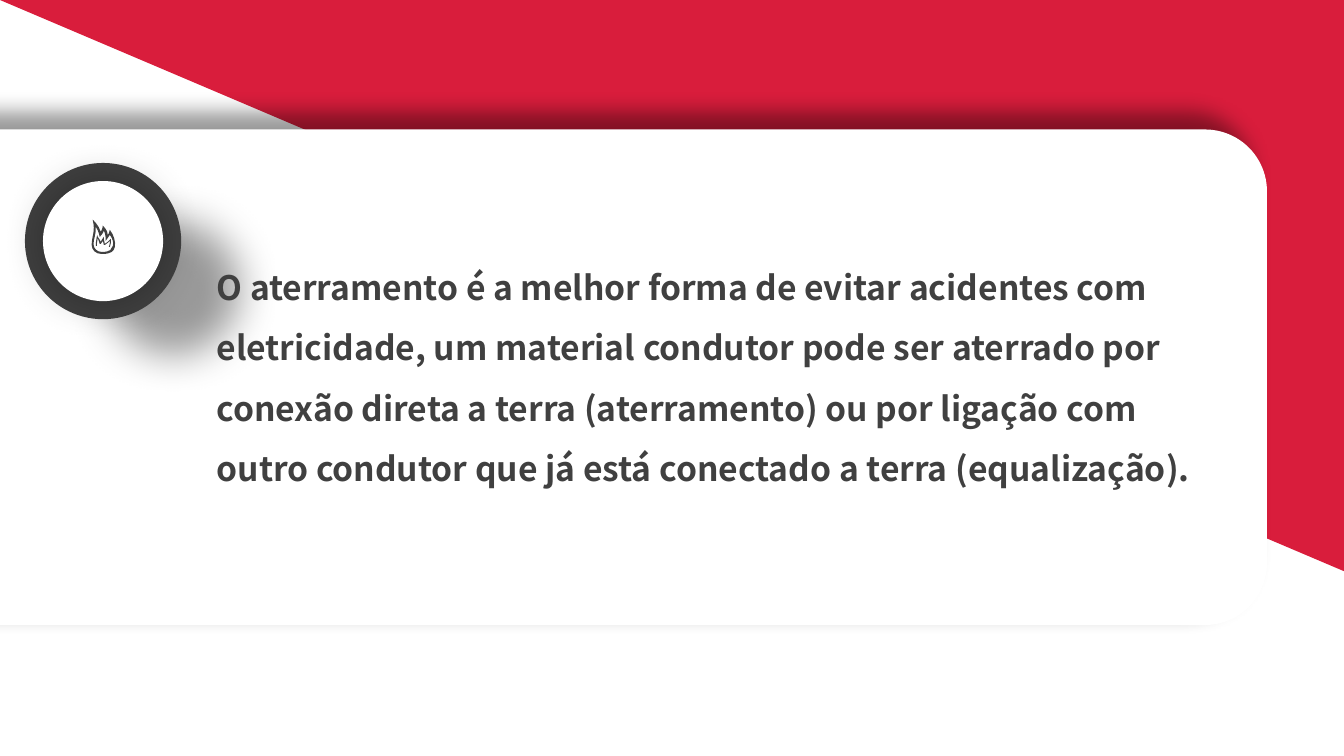
from lxml import etree
from pptx import Presentation
from pptx.dml.color import RGBColor
from pptx.enum.shapes import MSO_SHAPE as SHAPE
from pptx.enum.text import MSO_AUTO_SIZE as AUTO_SIZE
from pptx.oxml.ns import qn
from pptx.util import Pt

COLORS = {"white": "FFFFFF", "red": "D91D3C", "dark": "404040", "shadow": "000000"}
FONT = "Noto Sans CJK SC"
WIDTH, HEIGHT = 960, 540
GRID = Pt(0.72)  # grid step of the flame contours

MESSAGE = (
    "O aterramento é a melhor forma de evitar acidentes com eletricidade, "
    "um material condutor pode ser aterrado por conexão direta a terra "
    "(aterramento) ou por ligação com outro condutor que já está conectado "
    "a terra (equalização)."
)

# Each contour is a start point, then lines (x, y) or cubic curves (six numbers).
FLAME_RIM = [
    [(112, 244), (111, 247, 110, 250, 101, 250), (96, 250, 93, 246, 93, 243),
     (93, 240, 93, 238, 94, 235), (95, 232, 95, 229, 95, 225),
     (98, 229, 99, 235, 99, 235), (99, 235, 103, 231, 103, 229),
     (104, 230, 105, 234, 105, 239), (105, 239, 107, 236, 109, 233),
     (112, 237, 113, 241, 112, 244)],
    [(109, 228), (109, 231, 107, 233, 107, 233), (107, 228, 102, 224, 102, 224),
     (102, 224, 102, 227, 100, 230), (98, 223, 92, 218, 92, 218),
     (95, 230, 91, 234, 91, 243), (91, 248, 95, 252, 101, 252),
     (111, 252, 113, 249, 114, 245), (115, 240, 113, 233, 109, 228)],
]
FLAME_CORE = [
    [(110, 237), (109, 238), (108, 239, 107, 240, 104, 242),
     (103, 240, 103, 239, 103, 237), (103, 235), (101, 238),
     (101, 239, 100, 239, 100, 240), (99, 238, 98, 236, 97, 235),
     (97, 233), (96, 235), (96, 237, 95, 239, 95, 244), (96, 244),
     (96, 240, 97, 238, 97, 236), (98, 238, 98, 239, 99, 242), (100, 242),
     (101, 240, 101, 240, 102, 239), (102, 240, 103, 241, 103, 243), (104, 243),
     (107, 241, 108, 240, 109, 239), (109, 241, 109, 243, 108, 245), (109, 245),
     (110, 243, 110, 240, 110, 238), (110, 237)],
]


def paint(shape, color):
    shape.fill.solid()
    shape.fill.fore_color.rgb = RGBColor.from_string(COLORS[color])
    shape.line.fill.background()
    shape.shadow.inherit = False


def add_solid(shapes, kind, left, top, width, height, color):
    solid = shapes.add_shape(kind, Pt(left), Pt(top), Pt(width), Pt(height))
    paint(solid, color)
    return solid


def add_circle(shapes, center_x, center_y, diameter, color):
    radius = diameter / 2
    return add_solid(shapes, SHAPE.OVAL, center_x - radius, center_y - radius,
                     diameter, diameter, color)


def cast_shadow(shape, blur, distance, degrees, percent):
    """Add an outer shadow whose size is a percentage of the shape."""
    effects = shape._element.spPr.find(qn("a:effectLst"))
    size = str(int(percent * 1000))
    shadow = etree.SubElement(effects, qn("a:outerShdw"), blurRad=str(Pt(blur)),
                              dist=str(Pt(distance)), dir=str(degrees * 60000),
                              sx=size, sy=size, algn="ctr", rotWithShape="0")
    tint = etree.SubElement(shadow, qn("a:srgbClr"), val=COLORS["shadow"])
    etree.SubElement(tint, qn("a:alpha"), val="40000")


def bend(line, controls):
    """Turn a straight path segment into a cubic curve."""
    line.tag = qn("a:cubicBezTo")
    for index, (x, y) in enumerate(controls):
        line.insert(index, line.makeelement(qn("a:pt"), {"x": str(x), "y": str(y)}))


def add_outline(shapes, contours, color):
    ends = [[segment[-2:] for segment in contour] for contour in contours]
    builder = shapes.build_freeform(*ends[0][0], scale=GRID)
    for index, points in enumerate(ends):
        if index:
            builder.move_to(*points[0])
        builder.add_line_segments(points[1:], close=True)
    outline = builder.convert_to_shape()
    left = min(x for points in ends for x, y in points)
    top = min(y for points in ends for x, y in points)
    segments = [segment for contour in contours for segment in contour[1:]]
    lines = list(outline._element.spPr.iter(qn("a:lnTo")))
    for line, segment in zip(lines, segments):
        if len(segment) == 6:
            x1, y1, x2, y2 = segment[:4]
            bend(line, [(x1 - left, y1 - top), (x2 - left, y2 - top)])
    paint(outline, color)


def add_message(shapes, left, top, width, height):
    frame = shapes.add_textbox(Pt(left), Pt(top), Pt(width), Pt(height)).text_frame
    frame.word_wrap = True
    frame.auto_size = AUTO_SIZE.SHAPE_TO_FIT_TEXT
    frame.text = MESSAGE
    paragraph = frame.paragraphs[0]
    paragraph.line_spacing = 1.5
    font = paragraph.runs[0].font
    font.name, font.size, font.bold = FONT, Pt(24), True
    font.color.rgb = RGBColor.from_string(COLORS["dark"])


def main():
    deck = Presentation()
    deck.slide_width, deck.slide_height = Pt(WIDTH), Pt(HEIGHT)
    shapes = deck.slides.add_slide(deck.slide_layouts[6]).shapes

    add_solid(shapes, SHAPE.RECTANGLE, 0, 0, WIDTH, HEIGHT, "white")
    corner = add_solid(shapes, SHAPE.RIGHT_TRIANGLE, 0, 0, WIDTH, 408, "red")
    corner.rotation = 180

    card = add_solid(shapes, SHAPE.ROUND_2_SAME_RECTANGLE, 275.5, -183, 354, 905, "white")
    card.adjustments[0], card.adjustments[1] = 0.125, 0
    card.rotation = 90
    cast_shadow(card, blur=15, distance=10, degrees=210, percent=101.5)

    badge = shapes.add_group_shape().shapes
    ring = add_circle(badge, 73.6, 172.2, 111.6, "dark")
    cast_shadow(ring, blur=30, distance=60, degrees=34, percent=85)
    disc = add_circle(badge, 73.6, 172.2, 85.8, "white")
    cast_shadow(disc, blur=35, distance=0, degrees=0, percent=90)

    flame = shapes.add_group_shape().shapes
    add_outline(flame, FLAME_RIM, "dark")
    add_outline(flame, FLAME_CORE, "dark")

    add_message(shapes, 147.6, 172.5, 713.5, 220.3)
    deck.save("out.pptx")


if __name__ == "__main__":
    main()
